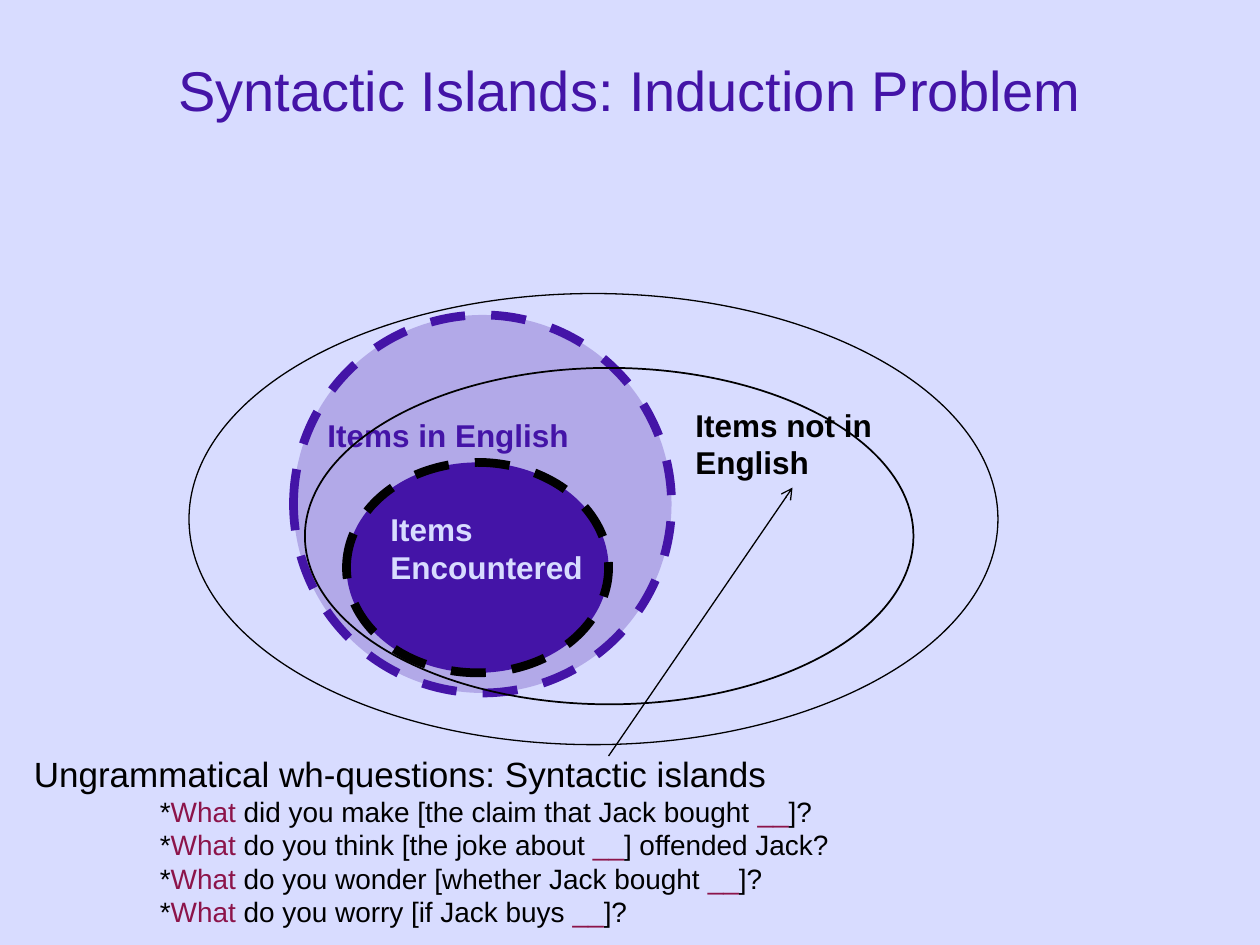
from dataclasses import dataclass

from lxml.etree import SubElement
from pptx import Presentation
from pptx.dml.color import RGBColor
from pptx.enum.dml import MSO_LINE
from pptx.enum.shapes import MSO_CONNECTOR, MSO_SHAPE
from pptx.enum.text import MSO_ANCHOR, MSO_AUTO_SIZE, PP_ALIGN
from pptx.oxml.ns import qn
from pptx.util import Inches, Pt


@dataclass(frozen=True)
class Theme:
    font: str = "Arial"
    pale: RGBColor = RGBColor.from_string("D8DCFF")
    violet: RGBColor = RGBColor.from_string("4414A7")
    ink: RGBColor = RGBColor.from_string("000000")
    wine: RGBColor = RGBColor.from_string("8C144A")
    title: int = 32
    heading: int = 20
    label: int = 18
    example: int = 16


theme = Theme()
deck = Presentation()
deck.slide_width, deck.slide_height = Inches(10), Inches(7.5)
page = deck.slides.add_slide(deck.slide_layouts[6])
page.background.fill.solid()
page.background.fill.fore_color.rgb = theme.pale


def add_ellipse(left, top, width, height, line_color, line_width, fill=None, opacity=None):
    ellipse = page.shapes.add_shape(
        MSO_SHAPE.OVAL, Inches(left), Inches(top), Inches(width), Inches(height))
    ellipse.shadow.inherit = False
    ellipse.line.color.rgb = line_color
    ellipse.line.width = Pt(line_width)
    if fill is None:
        ellipse.fill.background()
        return
    ellipse.line.dash_style = MSO_LINE.DASH
    ellipse.fill.solid()
    ellipse.fill.fore_color.rgb = fill
    if opacity:
        color = ellipse._element.spPr.find(qn("a:solidFill"))[0]
        SubElement(color, qn("a:alpha"), val=str(opacity * 1000))


def add_text(text, left, top, width, height, size, color, bold=False, wrap=True):
    box = page.shapes.add_textbox(Inches(left), Inches(top), Inches(width), Inches(height))
    frame = box.text_frame
    frame.text = text
    frame.word_wrap = wrap
    frame.auto_size = MSO_AUTO_SIZE.SHAPE_TO_FIT_TEXT
    font = frame.paragraphs[0].runs[0].font
    font.name, font.size, font.bold = theme.font, Pt(size), bold
    font.color.rgb = color
    return frame


title = add_text("Syntactic Islands: Induction Problem", 0.75, 0.08, 8.5, 1.25,
                 theme.title, theme.violet)
title.auto_size = MSO_AUTO_SIZE.NONE
title.vertical_anchor = MSO_ANCHOR.MIDDLE
title.paragraphs[0].alignment = PP_ALIGN.CENTER

add_ellipse(1.5, 2.33, 6.42, 3.58, theme.ink, 0.75)
add_ellipse(2.33, 2.5, 3, 3, theme.violet, 5, theme.violet, 25)
add_ellipse(2.75, 3.67, 2.08, 1.67, theme.ink, 5, theme.violet)

add_text("Items Encountered", 3, 4, 1.75, 0.7, theme.label, theme.pale, bold=True)
add_text("Items in English", 2.5, 3.25, 2.12, 0.4, theme.label, theme.violet,
         bold=True, wrap=False)
add_text("Items not in English", 5.42, 3.17, 1.75, 0.7, theme.label, theme.ink, bold=True)

add_ellipse(2.42, 2.92, 4.83, 2.67, theme.ink, 1)

questions = add_text("Ungrammatical wh-questions: Syntactic islands", 0.17, 5.92, 7.25, 1.5,
                     theme.heading, theme.ink)
examples = [
    (" did you make [the claim that Jack bought ", "]?"),
    (" do you think [the joke about ", "] offended Jack?"),
    (" do you wonder [whether Jack bought ", "]?"),
    (" do you worry [if Jack buys ", "]?"),
]
for before_gap, after_gap in examples:
    para = questions.add_paragraph()
    para._p.get_or_add_pPr().set("marL", str(Inches(1)))
    for text, color in [
        ("*", theme.ink),
        ("What", theme.wine),
        (before_gap, theme.ink),
        ("__", theme.wine),
        (after_gap, theme.ink),
    ]:
        span = para.add_run()
        span.text = text
        span.font.name, span.font.size = theme.font, Pt(theme.example)
        span.font.color.rgb = color

arrow = page.shapes.add_connector(
    MSO_CONNECTOR.STRAIGHT, Inches(4.83), Inches(6), Inches(6.29), Inches(3.87))
arrow.line.color.rgb = theme.ink
arrow.line.width = Pt(0.75)
SubElement(arrow.line._get_or_add_ln(), qn("a:tailEnd"), type="arrow")
SubElement(arrow._element.spPr, qn("a:effectLst"))

deck.save("out.pptx")
